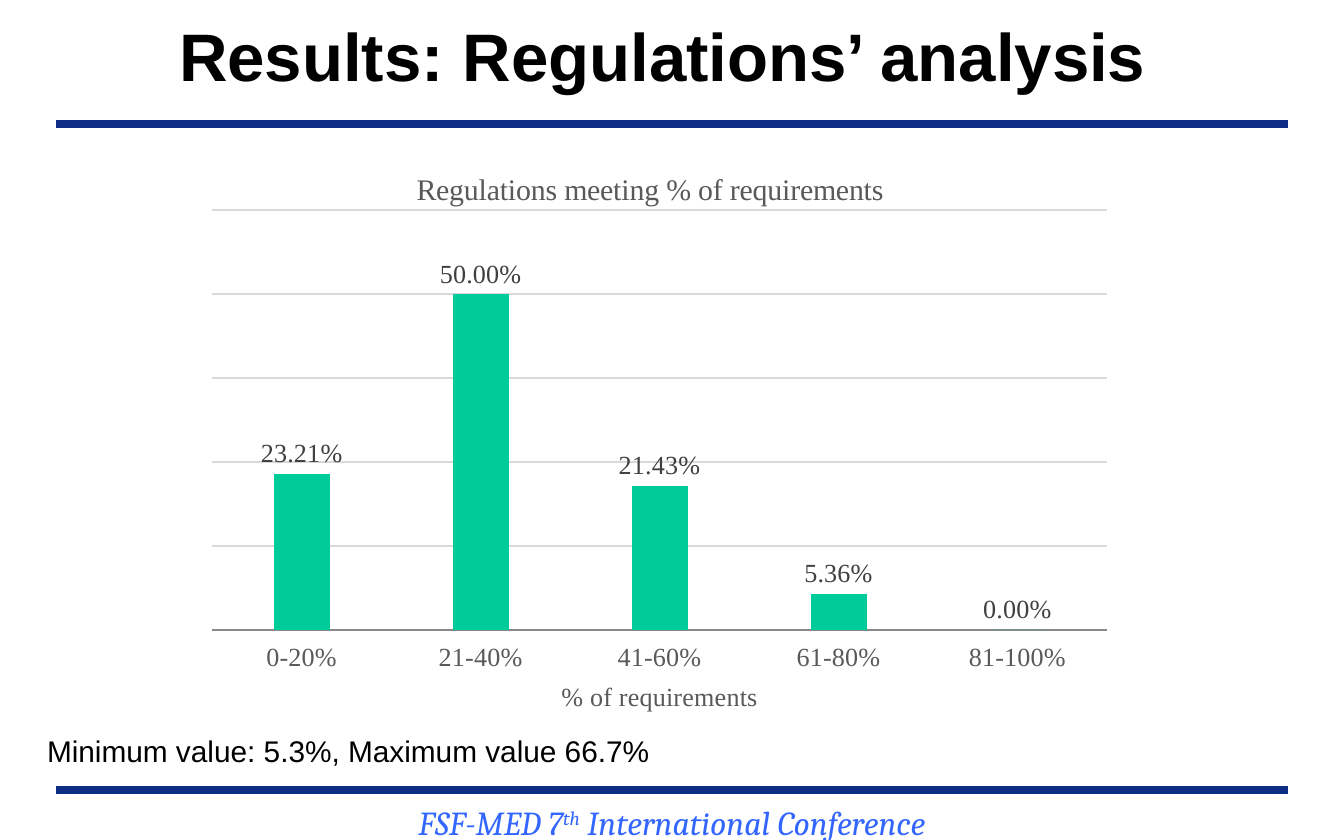
from lxml.etree import SubElement
from pptx import Presentation
from pptx.chart.data import CategoryChartData
from pptx.dml.color import RGBColor
from pptx.enum.chart import (XL_CHART_TYPE, XL_LABEL_POSITION,
                             XL_TICK_LABEL_POSITION, XL_TICK_MARK)
from pptx.enum.shapes import MSO_CONNECTOR
from pptx.enum.text import MSO_ANCHOR, PP_ALIGN
from pptx.oxml import parse_xml
from pptx.oxml.ns import nsdecls, qn
from pptx.util import Cm, Pt

TITLE = dict(name="Arial", size=Pt(36), bold=True, color="000000")
NOTE = dict(name="Arial", size=Pt(16), color="000000")
FOOTER = dict(name="Cambria", size=Pt(18), italic=True, color="3366FF")
CHART_TITLE = dict(name="Times New Roman", size=Pt(16), bold=False, color="595959")
AXIS = {**CHART_TITLE, "size": Pt(14)}
LABEL = {**AXIS, "color": "404040"}


def rgb(hex_color):
    return RGBColor.from_string(hex_color)


def set_font(font, style):
    for key, value in style.items():
        if key == "color":
            font.color.rgb = rgb(value)
        else:
            setattr(font, key, value)


def set_line(line, color, width):
    line.color.rgb = rgb(color)
    line.width = Pt(width)


class SlideBuilder:
    """Holds the shared style and the slide being filled."""
    rule_color = "0C2D83"
    bar_color = "00CC99"
    inset = Cm(0.13)

    def __init__(self, prs):
        self.s = prs.slides.add_slide(prs.slide_layouts[5])

    def fill_text(self, sp, runs, style, align, anchor=MSO_ANCHOR.TOP):
        """Write (text, baseline) runs as a single paragraph."""
        tf = sp.text_frame
        frame = dict(word_wrap=True, vertical_anchor=anchor)
        for side in ("left", "right", "top", "bottom"):
            frame[f"margin_{side}"] = self.inset
        for key, value in frame.items():
            setattr(tf, key, value)
        p = tf.paragraphs[0]
        p.alignment = align
        for text, baseline in runs:
            r = p.add_run()
            r.text = text
            set_font(r.font, style)
            if baseline:
                r._r.get_or_add_rPr().set("baseline", str(baseline))

    def title(self, text, left, top, width, height):
        sp = self.s.shapes.title
        sp.left, sp.top, sp.width, sp.height = left, top, width, height
        self.fill_text(sp, [(text, 0)], TITLE, PP_ALIGN.CENTER, MSO_ANCHOR.MIDDLE)

    def text(self, runs, style, align, *box):
        sp = self.s.shapes.add_textbox(*box)
        self.fill_text(sp, runs, style, align)

    def rule(self, left, right, y):
        line = self.s.shapes.add_connector(MSO_CONNECTOR.STRAIGHT, left, y, right, y)
        set_line(line.line, self.rule_color, 4.5)
        SubElement(line._element.spPr, qn("a:effectLst"))

    def column_chart(self, title, axis_title, values, *box):
        data = CategoryChartData(number_format="0.00%")
        data.categories = list(values)
        data.add_series("Series 1", list(values.values()))
        chart = self.s.shapes.add_chart(
            XL_CHART_TYPE.COLUMN_CLUSTERED, *box, data).chart
        set_font(chart.font, AXIS)
        chart.has_legend = False
        chart.has_title = True
        self.caption(chart.chart_title, title, CHART_TITLE)
        self.format_axes(chart, axis_title)

        plot = chart.plots[0]
        plot.gap_width, plot.overlap = 219, -27
        plot.vary_by_categories = False
        fill = plot.series[0].format.fill
        fill.solid()
        fill.fore_color.rgb = rgb(self.bar_color)
        plot.has_data_labels = True
        labels = plot.data_labels
        label_format = dict(show_value=True, number_format="0.00%",
                            number_format_is_linked=False,
                            position=XL_LABEL_POSITION.OUTSIDE_END)
        for key, value in label_format.items():
            setattr(labels, key, value)
        set_font(labels.font, LABEL)
        self.place_plot(chart, x=0.026, y=0.111, w=0.969, h=0.731)

    def caption(self, owner, text, style):
        r = owner.text_frame.paragraphs[0].add_run()
        r.text = text
        set_font(r.font, style)

    def format_axes(self, chart, axis_title):
        cat, val = chart.category_axis, chart.value_axis
        for axis in (cat, val):
            axis.major_tick_mark = axis.minor_tick_mark = XL_TICK_MARK.NONE
        cat.tick_label_position = XL_TICK_LABEL_POSITION.LOW
        set_font(cat.tick_labels.font, AXIS)
        set_line(cat.format.line, "888888", 1)
        self.caption(cat.axis_title, axis_title, AXIS)

        scale = dict(minimum_scale=0, maximum_scale=0.625, major_unit=0.125,
                     has_major_gridlines=True,
                     tick_label_position=XL_TICK_LABEL_POSITION.NONE)
        for key, value in scale.items():
            setattr(val, key, value)
        val.format.line.fill.background()
        set_line(val.major_gridlines.format.line, "D9D9D9", 1)

    def place_plot(self, chart, **place):
        """Fix the inner plot area as fractions of the chart."""
        area = chart._chartSpace.chart.plotArea
        for old in area.findall(qn("c:layout")):
            area.remove(old)
        modes = "".join(f'<c:{k}Mode val="edge"/>' for k in "xy")
        sizes = "".join(f'<c:{k} val="{v}"/>' for k, v in place.items())
        area.insert(0, parse_xml(
            f'<c:layout {nsdecls("c")}><c:manualLayout>'
            f'<c:layoutTarget val="inner"/>{modes}{sizes}'
            f'</c:manualLayout></c:layout>'))


def main():
    prs = Presentation()
    prs.slide_width, prs.slide_height = Cm(25.4), Cm(15.88)
    slide = SlideBuilder(prs)
    for y in (Cm(2.34), Cm(14.93)):
        slide.rule(Cm(1.06), Cm(24.34), y)
    slide.text([("FSF-MED 7", 0), ("th", 30000), (" International Conference", 0)],
               FOOTER, PP_ALIGN.CENTER, Cm(3.6), Cm(15.04), Cm(18.2), Cm(1.04))
    slide.title("Results: Regulations’ analysis ",
                Cm(1.27), Cm(0), Cm(22.86), Cm(2.08))
    slide.column_chart(
        "Regulations meeting % of requirements", "% of requirements",
        {"0-20%": 0.2321, "21-40%": 0.5, "41-60%": 0.2143,
         "61-80%": 0.0536, "81-100%": 0},
        Cm(3.56), Cm(2.77), Cm(17.45), Cm(10.85))
    slide.text([("Minimum value: 5.3%, Maximum value 66.7%", 0)],
               NOTE, PP_ALIGN.LEFT, Cm(0.76), Cm(13.72), Cm(12.67), Cm(0.86))
    prs.save("out.pptx")


if __name__ == "__main__":
    main()
